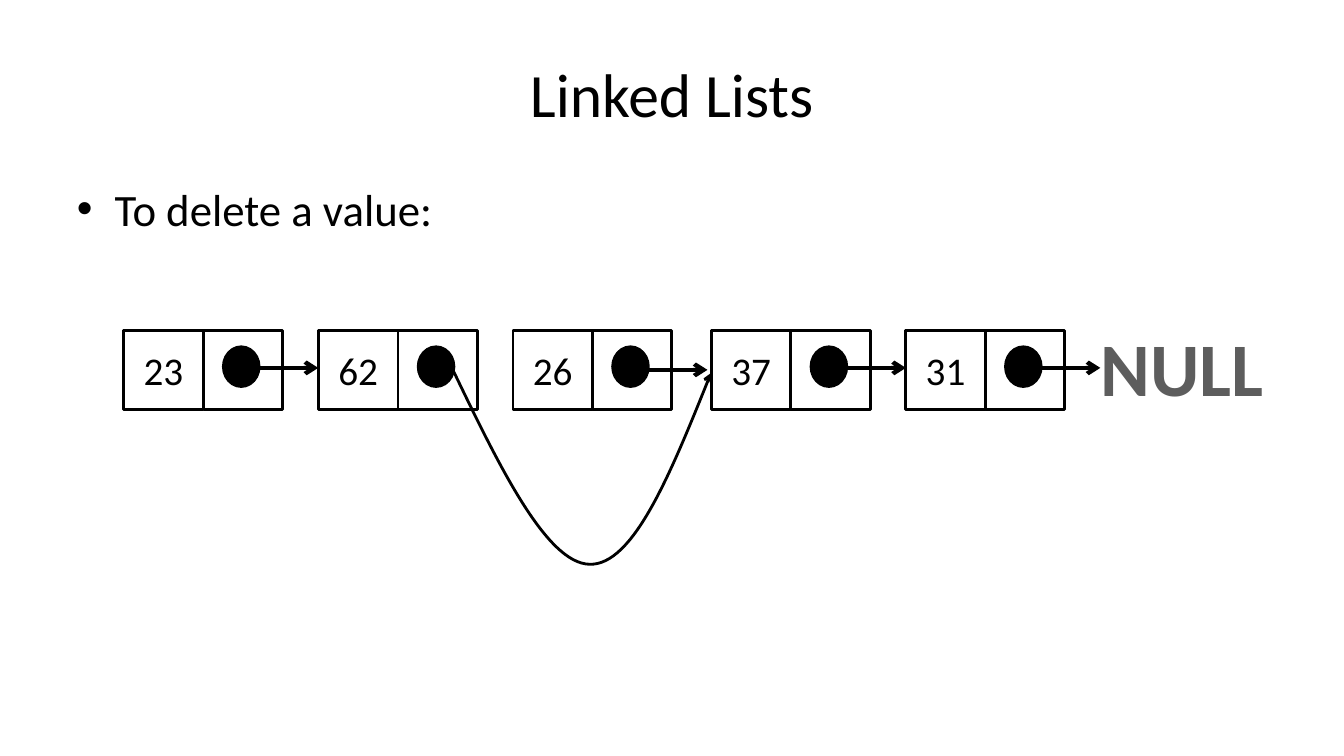
from lxml.etree import SubElement
from pptx import Presentation
from pptx.dml.color import RGBColor
from pptx.enum.shapes import MSO_CONNECTOR, MSO_SHAPE
from pptx.enum.text import MSO_ANCHOR, PP_ALIGN
from pptx.oxml.ns import qn
from pptx.util import Cm, Pt

BLACK = "000000"
CELL = 2
NODE_TOP = 8.33
ARROW_Y = 9.27
NODES = [("23", 3.12), ("62", 8.03), ("26", 12.93), ("37", 17.93), ("31", 22.83)]
BYPASSED_FROM = "62"
DELETED = "26"


def rgb(value):
    return RGBColor.from_string(value)


def write(tf, text, size, color=BLACK, bold=False, align=PP_ALIGN.CENTER):
    tf.text = text
    p = tf.paragraphs[0]
    p.alignment = align
    font = p.runs[0].font
    font.name = "Calibri"
    font.size = Pt(size)
    font.bold = bold
    font.color.rgb = rgb(color)
    return p


def add_arrowhead(sp):
    SubElement(sp.line._get_or_add_ln(), qn("a:tailEnd"), type="arrow")


def set_outline(sp, width):
    sp.line.color.rgb = rgb(BLACK)
    sp.line.width = Pt(width)


def add_box(s, x, y, w, h):
    box = s.shapes.add_textbox(Cm(x), Cm(y), Cm(w), Cm(h))
    return box.text_frame


def add_outlined(s, kind, x, y, w, h, fill=None):
    sp = s.shapes.add_shape(kind, Cm(x), Cm(y), Cm(w), Cm(h))
    sp.shadow.inherit = False
    set_outline(sp, 2)
    if fill:
        sp.fill.solid()
        sp.fill.fore_color.rgb = rgb(fill)
    else:
        sp.fill.background()
    return sp


def add_arrow(s, x1, x2, y):
    line = s.shapes.add_connector(MSO_CONNECTOR.STRAIGHT, Cm(x1), Cm(y), Cm(x2), Cm(y))
    set_outline(line, 3)
    add_arrowhead(line)
    SubElement(line._element.spPr, qn("a:effectLst"))


def add_node(s, value, x):
    cell = add_outlined(s, MSO_SHAPE.RECTANGLE, x, NODE_TOP, CELL, CELL)
    tf = cell.text_frame
    tf.word_wrap = True
    tf.vertical_anchor = MSO_ANCHOR.MIDDLE
    write(tf, value, 28)
    add_outlined(s, MSO_SHAPE.OVAL, x + 2.51, NODE_TOP + 0.41, 0.9, 1, BLACK)
    add_outlined(s, MSO_SHAPE.RECTANGLE, x + CELL, NODE_TOP, CELL, CELL)
    if value != BYPASSED_FROM:
        y = ARROW_Y + 0.05 if value == DELETED else ARROW_Y
        add_arrow(s, x + 3.4, x + 4.9, y)


def add_curved_arrow(s, start, *points):
    scaled = [(Cm(x), Cm(y)) for x, y in points]
    builder = s.shapes.build_freeform(Cm(start[0]), Cm(start[1]))
    builder.add_line_segments(scaled, close=False)
    sp = builder.convert_to_shape()
    sp.shadow.inherit = False
    sp.fill.background()
    set_outline(sp, 2)
    add_arrowhead(sp)
    outline = sp._element.find(".//" + qn("a:path"))
    steps = outline.findall(qn("a:lnTo"))
    for i in range(0, len(steps), 3):
        curve = SubElement(outline, qn("a:cubicBezTo"))
        for step in steps[i:i + 3]:
            curve.append(step[0])
            outline.remove(step)


def add_title(s, text):
    title = s.shapes.title
    title.left, title.top, title.width, title.height = Cm(1.69), Cm(0.76), Cm(30.48), Cm(3.18)
    title.text_frame.vertical_anchor = MSO_ANCHOR.MIDDLE
    write(title.text_frame, text, 44)


def add_bullet(s, text):
    tf = add_box(s, 1.69, 4.45, 30.48, 12.57)
    tf.word_wrap = True
    p = write(tf, text, 32, align=PP_ALIGN.LEFT)
    p.space_before = Pt(6.4)
    pPr = p._p.get_or_add_pPr()
    pPr.set("marL", str(Cm(0.95)))
    pPr.set("indent", str(Cm(-0.95)))
    SubElement(pPr, qn("a:buFont"), typeface="Arial")
    SubElement(pPr, qn("a:buChar"), char="•")


def main():
    prs = Presentation()
    prs.slide_width, prs.slide_height = Cm(33.87), Cm(19.05)
    s = prs.slides.add_slide(prs.slide_layouts[5])
    add_title(s, "Linked Lists")
    add_bullet(s, "To delete a value:")
    for value, x in NODES:
        add_node(s, value, x)
    tf = add_box(s, 27.46, 7.95, 4.67, 2.57)
    tf.word_wrap = False
    write(tf, "NULL", 54, "5D5D5D", bold=True)
    add_curved_arrow(s, (11.38, 9.25), (12.57, 11.73), (13.77, 14.2), (14.86, 14.22),
                     (15.95, 14.25), (16.94, 11.84), (17.92, 9.4))
    prs.save("out.pptx")


if __name__ == "__main__":
    main()
